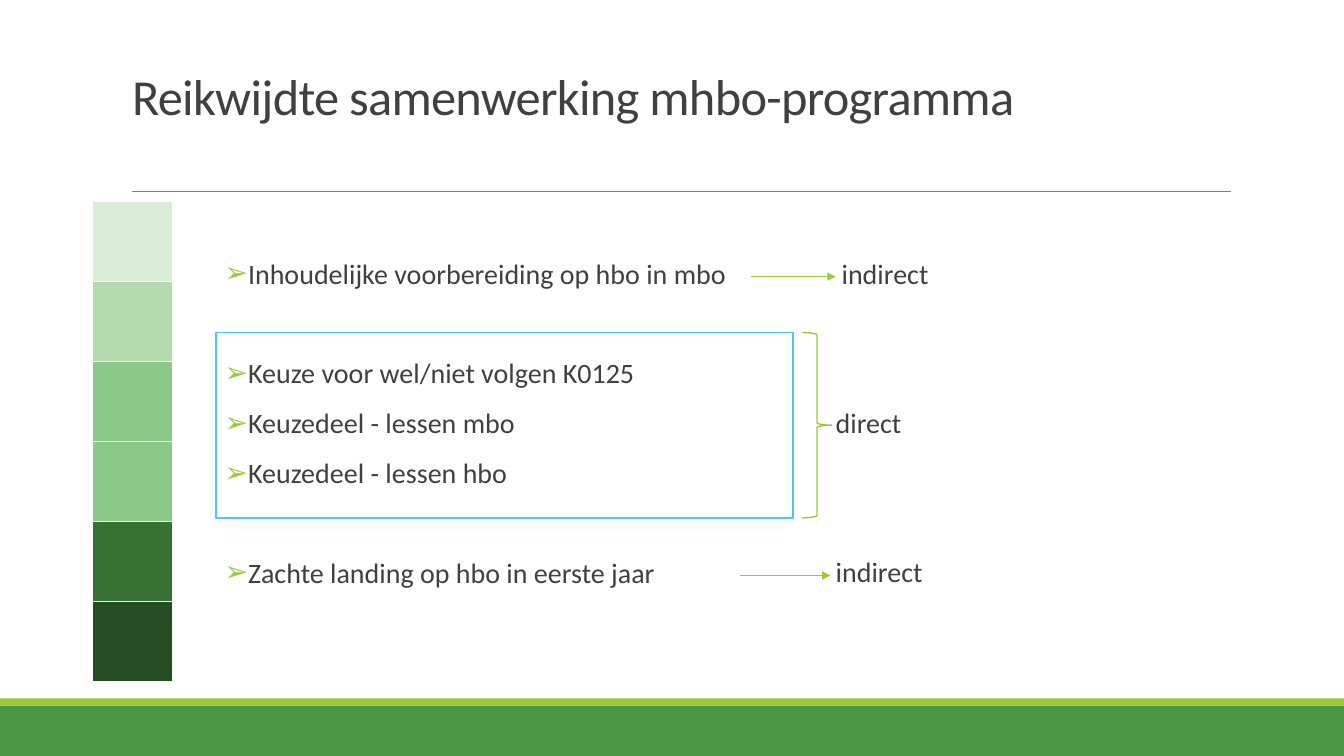
from lxml import etree
from pptx import Presentation
from pptx.dml.color import RGBColor
from pptx.enum.shapes import MSO_CONNECTOR, MSO_SHAPE
from pptx.enum.text import MSO_ANCHOR
from pptx.oxml.ns import qn
from pptx.util import Cm, Pt

STRAIGHT = MSO_CONNECTOR.STRAIGHT
RECTANGLE = MSO_SHAPE.RECTANGLE
RIGHT_BRACE = MSO_SHAPE.RIGHT_BRACE
TOP = MSO_ANCHOR.TOP
BOTTOM = MSO_ANCHOR.BOTTOM

WHITE = RGBColor(0xFF, 0xFF, 0xFF)
TEXT_GREY = RGBColor(0x40, 0x40, 0x40)
RULE_GREY = RGBColor(0x80, 0x80, 0x80)
LIME = RGBColor(0x99, 0xCB, 0x38)
GREEN = RGBColor(0x4B, 0x97, 0x45)
SKY = RGBColor(0x51, 0xC3, 0xF9)
SCALE_GREENS = [
    RGBColor(0xD9, 0xED, 0xD7),
    RGBColor(0xB3, 0xDB, 0xAF),
    RGBColor(0x8C, 0xC8, 0x88),
    RGBColor(0x8C, 0xC8, 0x88),
    RGBColor(0x38, 0x71, 0x34),
    RGBColor(0x26, 0x4C, 0x23),
]

FONT = "Calibri"
LINE_STEP = 1.255
STEPS = [
    (0, "Inhoudelijke voorbereiding op hbo in mbo"),
    (2, "Keuze voor wel/niet volgen K0125"),
    (3, "Keuzedeel - lessen mbo"),
    (4, "Keuzedeel - lessen hbo"),
    (6, "Zachte landing op hbo in eerste jaar"),
]
REACH = [(0, 15.55, "indirect"), (3, 15.4, "direct"), (6, 15.4, "indirect")]
ARROWS = [(0, 13.26, 15.4), (6, 13.0, 15.27)]


def add_block(slide, kind, left, top, width, height, fill=None, line=None, weight=1):
    block = slide.shapes.add_shape(kind, Cm(left), Cm(top), Cm(width), Cm(height))
    block.shadow.inherit = False
    if fill is None:
        block.fill.background()
    else:
        block.fill.solid()
        block.fill.fore_color.rgb = fill
    if line is None:
        block.line.fill.background()
    else:
        block.line.color.rgb = line
        block.line.width = Pt(weight)


def add_rule(slide, left, right, y, color, weight, arrow=False):
    rule = slide.shapes.add_connector(STRAIGHT, Cm(left), Cm(y), Cm(right), Cm(y))
    rule.line.color.rgb = color
    rule.line.width = Pt(weight)
    if arrow:
        etree.SubElement(rule.line._get_or_add_ln(), qn("a:tailEnd"), type="triangle")
    etree.SubElement(rule._element.spPr, qn("a:effectLst"))


def add_text_frame(slide, left, top, width, height, anchor=TOP):
    frame = slide.shapes.add_textbox(Cm(left), Cm(top), Cm(width), Cm(height)).text_frame
    frame.word_wrap = True
    frame.vertical_anchor = anchor
    frame.margin_left = frame.margin_right = 0
    frame.margin_top = frame.margin_bottom = 0
    return frame


def style_paragraph(paragraph, text, size, spacing):
    paragraph.text = text
    paragraph.line_spacing = spacing
    paragraph.font.name = FONT
    paragraph.font.size = Pt(size)
    paragraph.font.color.rgb = TEXT_GREY


def add_bullet(paragraph):
    properties = paragraph._p.get_or_add_pPr()
    properties.set("marL", str(Cm(0.25)))
    properties.set("indent", str(Cm(-0.25)))
    bullet_color = etree.Element(qn("a:buClr"))
    etree.SubElement(bullet_color, qn("a:srgbClr"), val=str(LIME))
    bullet_font = etree.Element(qn("a:buFont"), typeface=FONT)
    bullet = etree.Element(qn("a:buChar"), char="➢")
    position = properties.index(properties.find(qn("a:defRPr")))
    properties[position:position] = [bullet_color, bullet_font, bullet]


def add_header(slide, left, top, width, height):
    frame = add_text_frame(slide, left, top, width, height - 1.65, BOTTOM)
    title = frame.paragraphs[0]
    style_paragraph(title, "Reikwijdte samenwerking mhbo-programma", 36, 0.85)
    title.runs[0].font._element.set("spc", "-50")
    add_rule(slide, left, left + width, top + height, RULE_GREY, 0.5)


def add_footer(slide, left, top, width, height):
    stripe = 0.18
    add_block(slide, RECTANGLE, left, top + stripe, width, height - stripe, GREEN)
    add_block(slide, RECTANGLE, left, top, width, stripe, LIME)


def add_color_scale(slide, left, top, width, height):
    scale = slide.shapes.add_table(
        len(SCALE_GREENS), 1, Cm(left), Cm(top), Cm(width), Cm(height)
    ).table
    for row, green in enumerate(SCALE_GREENS):
        cell = scale.cell(row, 0)
        properties = cell._tc.get_or_add_tcPr()
        for side in ("a:lnL", "a:lnR", "a:lnT", "a:lnB"):
            border = etree.SubElement(properties, qn(side), w=str(Pt(1)))
            fill = etree.SubElement(border, qn("a:solidFill"))
            etree.SubElement(fill, qn("a:srgbClr"), val=str(WHITE))
        cell.fill.solid()
        cell.fill.fore_color.rgb = green


def add_steps(slide, left, top, width, height):
    frame_top = top + 1.83
    frame_width, frame_height = 14.55, 4.67
    add_block(slide, RECTANGLE, left - 0.22, frame_top, frame_width, frame_height,
              WHITE, SKY, 1.25)
    add_block(slide, RIGHT_BRACE, left + 14.56, frame_top, 0.74, frame_height, line=LIME)

    step_list = add_text_frame(slide, left, top, width, height)
    previous = 0
    for index, (line, text) in enumerate(STEPS):
        step = step_list.paragraphs[0] if index == 0 else step_list.add_paragraph()
        style_paragraph(step, text, 20, 0.9)
        skipped = max(line - previous - 1, 0)
        step.space_before = Pt(12 + round(skipped * LINE_STEP * 72 / 2.54, 1))
        step.space_after = Pt(2)
        add_bullet(step)
        previous = line

    for line, offset, text in REACH:
        label = add_text_frame(slide, left + offset, top + line * LINE_STEP, 4, 0.8)
        style_paragraph(label.paragraphs[0], text, 20, 0.9)
    for line, start, end in ARROWS:
        y = top + line * LINE_STEP + 0.42
        add_rule(slide, left + start, left + end, y, LIME, 1, arrow=True)


def main():
    presentation = Presentation()
    presentation.slide_width = Cm(33.87)
    presentation.slide_height = Cm(19.05)
    slide = presentation.slides.add_slide(presentation.slide_layouts[6])
    add_footer(slide, 0, 17.6, 33.87, 1.45)
    add_header(slide, 3.33, 0.8, 27.69, 4.03)
    add_color_scale(slide, 2.34, 5.08, 2, 12.09)
    add_steps(slide, 5.66, 6.55, 14, 9)
    presentation.save("out.pptx")


if __name__ == "__main__":
    main()
